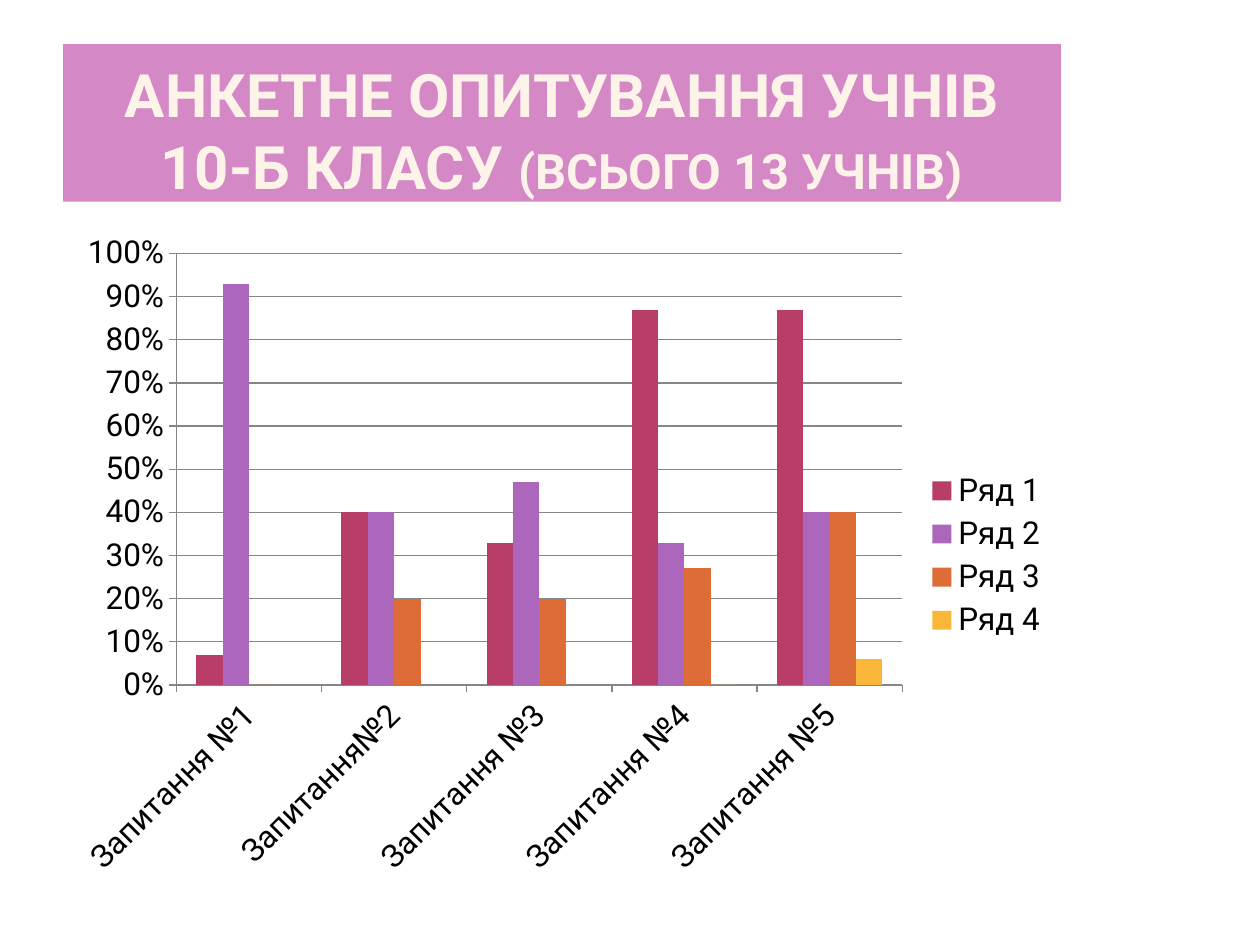
import pptx
import pptx.chart.data
import pptx.dml.color
import pptx.enum.chart
import pptx.enum.text
import pptx.util
from pptx.util import Inches

RGBColor = pptx.dml.color.RGBColor
BANNER = RGBColor(0xD4, 0x88, 0xC5)
CREAM = RGBColor(0xFE, 0xF3, 0xE8)
BLACK = RGBColor(0, 0, 0)
GRAY = RGBColor(0x86, 0x86, 0x86)
FONT = "Roboto"

QUESTIONS = ["Запитання №1", "Запитання№2", "Запитання №3", "Запитання №4", "Запитання №5"]
ANSWERS = [
    ("Ряд 1", (0.07, 0.4, 0.33, 0.87, 0.87), RGBColor(0xB8, 0x3D, 0x68)),
    ("Ряд 2", (0.93, 0.4, 0.47, 0.33, 0.4), RGBColor(0xAC, 0x66, 0xBB)),
    ("Ряд 3", (0, 0.2, 0.2, 0.27, 0.4), RGBColor(0xDE, 0x6C, 0x36)),
    ("Ряд 4", (None, None, None, 0, 0.06), RGBColor(0xF9, 0xB6, 0x39)),
]


def fill_title(title, left, top, width, height):
    title.left, title.top, title.width, title.height = left, top, width, height
    title.fill.solid()
    title.fill.fore_color.rgb = BANNER

    frame = title.text_frame
    frame.word_wrap = True
    frame.auto_size = pptx.enum.text.MSO_AUTO_SIZE.NONE
    frame.vertical_anchor = pptx.enum.text.MSO_ANCHOR.BOTTOM
    frame.margin_left = frame.margin_right = Inches(0.05)
    frame.margin_top = frame.margin_bottom = 0

    heading = frame.paragraphs[0]
    heading.text = "АНКЕТНЕ ОПИТУВАННЯ УЧНІВ\v10-Б КЛАСУ "
    heading.alignment = pptx.enum.text.PP_ALIGN.CENTER
    pupil_count = heading.add_run()
    pupil_count.text = "(ВСЬОГО 13 УЧНІВ)"
    for run in heading.runs:
        run.font.name = FONT
        run.font.size = pptx.util.Pt(34.2)
        run.font.bold = True
        run.font.color.rgb = CREAM
    pupil_count.font.size = pptx.util.Pt(27.9)


def add_survey_chart(slide, left, top, width, height):
    survey = pptx.chart.data.CategoryChartData(number_format="0%")
    survey.categories = QUESTIONS
    for name, shares, _ in ANSWERS:
        survey.add_series(name, shares)
    chart = slide.shapes.add_chart(
        pptx.enum.chart.XL_CHART_TYPE.COLUMN_CLUSTERED, left, top, width, height, survey
    ).chart
    chart.has_title = False
    chart.font.name = FONT
    chart.font.size = pptx.util.Pt(18)
    chart.font.color.rgb = BLACK

    chart.has_legend = True
    chart.legend.position = pptx.enum.chart.XL_LEGEND_POSITION.RIGHT
    chart.legend.include_in_layout = False

    plot = chart.plots[0]
    plot.vary_by_categories = False
    plot.gap_width = 150
    plot.overlap = 0
    for series, (_, _, color) in zip(plot.series, ANSWERS):
        series.invert_if_negative = False
        series.format.fill.solid()
        series.format.fill.fore_color.rgb = color

    for axis in (chart.category_axis, chart.value_axis):
        axis.major_tick_mark = pptx.enum.chart.XL_TICK_MARK.OUTSIDE
        axis.format.line.color.rgb = GRAY
        axis.tick_labels.font.size = pptx.util.Pt(18)
    # Category labels climb at 45 degrees
    chart.category_axis._element.txPr.bodyPr.set("rot", "-2700000")

    shares_axis = chart.value_axis
    shares_axis.minimum_scale, shares_axis.maximum_scale = 0, 1
    shares_axis.major_unit = 0.1
    shares_axis.tick_labels.number_format = "0%"
    shares_axis.tick_labels.number_format_is_linked = False
    shares_axis.has_major_gridlines = True
    shares_axis.major_gridlines.format.line.color.rgb = GRAY


def main():
    deck = pptx.Presentation()
    deck.slide_width, deck.slide_height = Inches(10), Inches(7.5)
    slide = deck.slides.add_slide(deck.slide_layouts.get_by_name("Title Only"))
    left, width = Inches(0.5), Inches(7.92)
    fill_title(slide.shapes.title, left, Inches(0.35), width, Inches(1.25))
    add_survey_chart(slide, left, Inches(1.76), width, Inches(5.3))
    deck.save("out.pptx")


if __name__ == "__main__":
    main()
